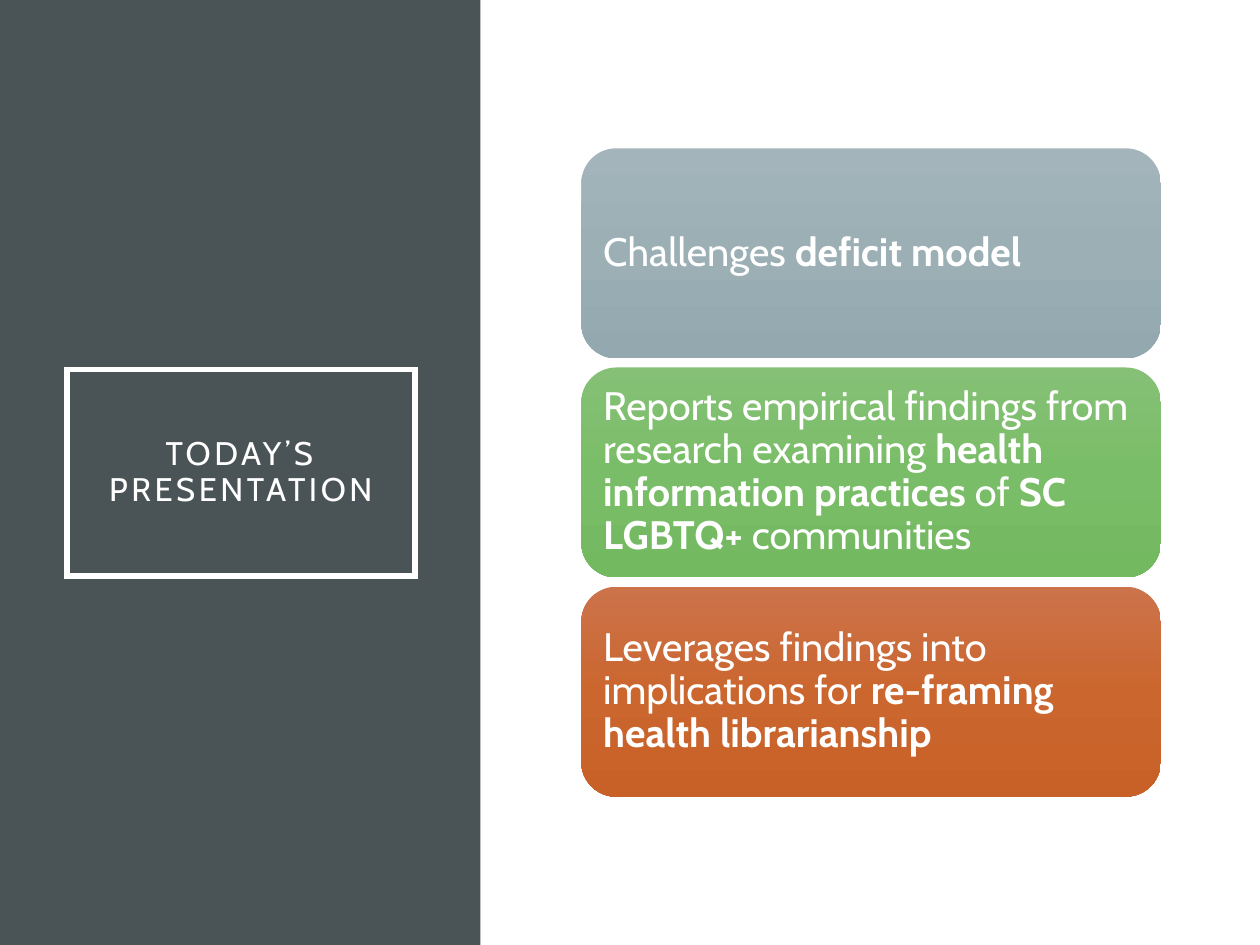
from copy import deepcopy

from lxml import etree
from pptx import Presentation
from pptx.dml.color import RGBColor
from pptx.enum import shapes, text
from pptx.oxml.ns import qn
from pptx.util import Inches, Pt

WIDTH, HEIGHT = 7.5, 7.5 * 3 / 4  # 4:3 slide
COLORS = {
    "white": "FFFFFF",
    "panel": "4A5356",
    "gray": ("A3B5BB", "9BAFB5", "93A9AF"),
    "green": ("85C076", "7ABD68", "73B960"),
    "orange": ("CC734B", "CB662F", "C86128"),
}


class Deck:
    font = "Cabin"

    def __init__(self, prs):
        self.s = prs.slides.add_slide(prs.slide_layouts[5])

    def rgb(self, value):
        return RGBColor.from_string(value)

    def style(self, sp, p, size, inset, align):
        tf = sp.text_frame
        tf.word_wrap = True
        tf.auto_size = text.MSO_AUTO_SIZE.NONE
        tf.vertical_anchor = text.MSO_ANCHOR.MIDDLE
        tf.margin_left = tf.margin_right = Inches(inset)
        tf.margin_top = tf.margin_bottom = Inches(inset)
        p.alignment = align
        p.line_spacing = 0.9
        p.font.name = self.font
        p.font.size = Pt(size)
        p.font.color.rgb = self.rgb(COLORS["white"])

    def shape(self, kind, x, y, w, h):
        sp = self.s.shapes.add_shape(kind, Inches(x), Inches(y), Inches(w), Inches(h))
        sp.shadow.inherit = False
        sp.line.fill.background()
        return sp

    def panel(self, x, y, w, h):
        sp = self.shape(shapes.MSO_SHAPE.RECTANGLE, x, y, w, h)
        sp.fill.solid()
        sp.fill.fore_color.rgb = self.rgb(COLORS["panel"])
        # Send behind the title
        self.s.shapes._spTree.insert(2, sp._element)

    def title(self, words, x, y, w, h):
        sp = self.s.shapes.title
        sp.left, sp.top, sp.width, sp.height = map(Inches, (x, y, w, h))
        sp.line.color.rgb = self.rgb(COLORS["white"])
        sp.line.width = Pt(2.5)
        # Square frame corners
        ln = sp._element.spPr.find(qn("a:ln"))
        etree.SubElement(ln, qn("a:miter")).set("lim", "800000")
        p = sp.text_frame.paragraphs[0]
        r = p.add_run()
        r.text = words
        r._r.get_or_add_rPr().set("spc", "150")
        self.style(sp, p, 14, 0.2, text.PP_ALIGN.CENTER)

    def card(self, runs, stops, x, y, w, h):
        sp = self.shape(shapes.MSO_SHAPE.ROUNDED_RECTANGLE, x, y, w, h)
        # Three-stop gradient, top to bottom
        sp.fill.gradient()
        sp.fill.gradient_angle = 270
        stop_list = sp._element.spPr.find(".//" + qn("a:gsLst"))
        stop_list.append(deepcopy(stop_list[0]))
        for i, (stop, color) in enumerate(zip(sp.fill.gradient_stops, stops)):
            stop.position = i / 2
            stop.color.rgb = self.rgb(color)
        # Text with bold key phrases
        p = sp.text_frame.paragraphs[0]
        for words, bold in runs:
            r = p.add_run()
            r.text = words
            r.font.bold = bold
        self.style(sp, p, 17, 0.07, text.PP_ALIGN.LEFT)


def main():
    prs = Presentation()
    prs.slide_width, prs.slide_height = Inches(WIDTH), Inches(HEIGHT)
    deck = Deck(prs)

    # Left panel and title
    deck.panel(0, 0, 2.86, HEIGHT)
    deck.title("TODAY’S PRESENTATION", 0.4, 2.2, 2.07, 1.23)

    # Stacked cards, centred on the slide height
    cards = [
        ("gray", [("Challenges ", False), ("deficit model", True)]),
        ("green", [("Reports empirical findings from research examining ", False),
                   ("health information practices ", True), ("of ", False),
                   ("SC LGBTQ+", True), (" communities", False)]),
        ("orange", [("Leverages findings into implications for ", False),
                    ("re-framing health librarianship", True)]),
    ]
    card_h, gap = 1.25, 0.055
    top = (HEIGHT - 3 * card_h - 2 * gap) / 2
    for i, (color, runs) in enumerate(cards):
        deck.card(runs, COLORS[color], 3.46, top + i * (card_h + gap), 3.45, card_h)

    prs.save("out.pptx")


if __name__ == "__main__":
    main()
